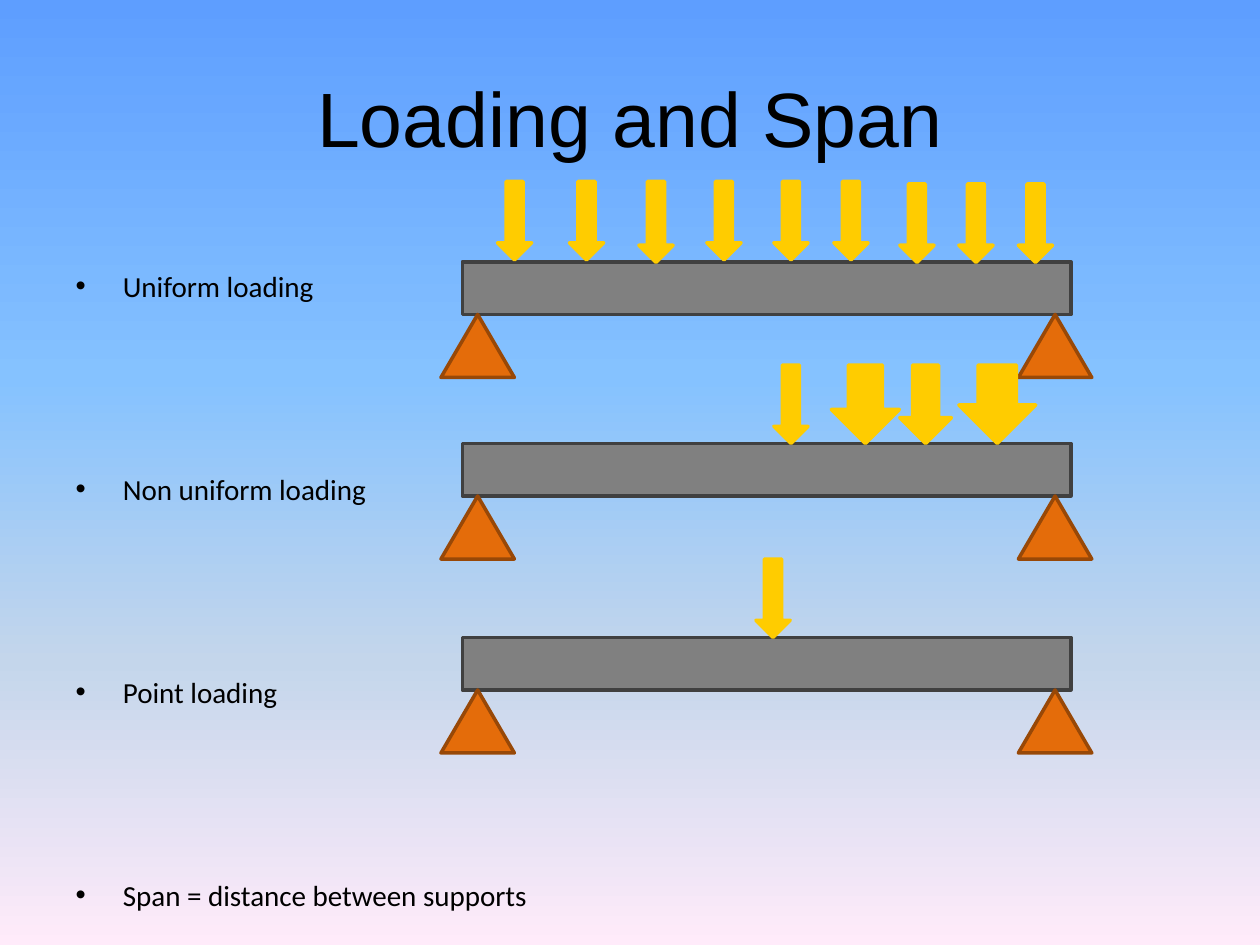
from lxml.etree import SubElement
from pptx import Presentation
from pptx.dml.color import RGBColor
from pptx.enum.shapes import MSO_SHAPE as Preset
from pptx.enum.text import MSO_ANCHOR as Anchor, MSO_AUTO_SIZE as AutoSize, PP_ALIGN as Align
from pptx.oxml.ns import qn
from pptx.util import Cm, Pt

SKY = [(0, "5E9EFF"), (40, "85C2FF"), (70, "C4D6EB"), (100, "FFEBFA")]
TOPICS = ["Uniform loading", "Non uniform loading", "Point loading",
          "Span = distance between supports"]

# Beam geometry in cm
BEAM_LEFT, BEAM_WIDTH, BEAM_HEIGHT = 9.32, 12.27, 1.06
SUPPORT_LEFTS, SUPPORT_WIDTH, SUPPORT_HEIGHT = (8.89, 20.53), 1.48, 1.27
BEAM_TOPS = [5.28, 8.94, 12.85]

# Load arrows in cm
SLIM, DROP = 0.69, 1.58
HIGH_LOADS = [10.03, 11.48, 14.25, 15.6, 16.81]
LOW_LOADS = [18.14, 19.33, 20.53]
UNEVEN_LOADS = [(15.6, SLIM), (16.76, 1.37), (18.14, 1.04), (19.33, 1.55)]


def color(code):
    return RGBColor.from_string(code)


class LoadingSlide:
    BLACK = "000000"
    BEAM = ("808080", "404040")
    SUPPORT = ("E46C0A", "984807")
    LOAD = ("FFCC00", "FFCC00")
    LINE = Pt(2)

    def __init__(self, deck):
        self.slide = deck.slides.add_slide(deck.slide_layouts[1])

    def background(self, stops):
        fill = self.slide.background.fill
        fill.gradient()
        fill.gradient_angle = 270
        stop_list = self.slide.element.find(".//" + qn("a:gsLst"))
        stop_list.clear()
        for percent, code in stops:
            stop = SubElement(stop_list, qn("a:gs"), pos=str(percent * 1000))
            SubElement(stop, qn("a:srgbClr"), val=code)

    def place(self, item, left, top, width, height):
        item.left, item.top = Cm(left), Cm(top)
        item.width, item.height = Cm(width), Cm(height)

    def style(self, paragraph, name, size):
        font = paragraph.font
        font.name, font.size = name, Pt(size)
        font.color.rgb = color(self.BLACK)

    def title(self, text):
        heading = self.slide.shapes.title
        self.place(heading, 1.27, 0.76, 22.86, 3.18)
        frame = heading.text_frame
        frame.text = text
        frame.vertical_anchor = Anchor.MIDDLE
        frame.paragraphs[0].alignment = Align.CENTER
        self.style(frame.paragraphs[0], "Arial", 44)

    def bullets(self, lines):
        body = self.slide.placeholders[1]
        self.place(body, 1.27, 5.28, 22.86, 13.3)
        frame = body.text_frame
        frame.text = "\n".join(lines)
        frame.auto_size = AutoSize.NONE
        for paragraph in frame.paragraphs:
            paragraph.space_before = Pt(0)
            paragraph.space_after = Pt(96.1)
            self.style(paragraph, "Calibri", 16.6)
        frame.paragraphs[-1].space_after = Pt(0)

    def shape(self, shapes, preset, box, colors):
        item = shapes.add_shape(preset, *(Cm(length) for length in box))
        item.shadow.inherit = False
        item.fill.solid()
        item.fill.fore_color.rgb = color(colors[0])
        item.line.color.rgb = color(colors[1])
        item.line.width = self.LINE

    def beam(self, top):
        parts = self.slide.shapes.add_group_shape().shapes
        self.shape(parts, Preset.RECTANGLE,
                   (BEAM_LEFT, top, BEAM_WIDTH, BEAM_HEIGHT), self.BEAM)
        for left in SUPPORT_LEFTS:
            self.shape(parts, Preset.ISOSCELES_TRIANGLE,
                       (left, top + BEAM_HEIGHT, SUPPORT_WIDTH, SUPPORT_HEIGHT),
                       self.SUPPORT)

    def load(self, left, top, width=SLIM, height=DROP):
        self.shape(self.slide.shapes, Preset.DOWN_ARROW,
                   (left, top, width, height), self.LOAD)


def main():
    deck = Presentation()
    deck.slide_width, deck.slide_height = Cm(25.4), Cm(19.05)
    page = LoadingSlide(deck)
    page.background(SKY)
    page.title("Loading and Span")
    page.bullets(TOPICS)

    # Beams on their supports
    for top in BEAM_TOPS:
        page.beam(top)

    # Uniform loading
    for left in HIGH_LOADS:
        page.load(left, 3.66)
    page.load(12.88, 3.66, height=1.63)
    for left in LOW_LOADS:
        page.load(left, 3.71)

    # Non uniform loading
    for left, width in UNEVEN_LOADS:
        page.load(left, BEAM_TOPS[1] - DROP, width)

    # Point loading
    page.load(15.24, BEAM_TOPS[2] - DROP)

    deck.save("out.pptx")


if __name__ == "__main__":
    main()
